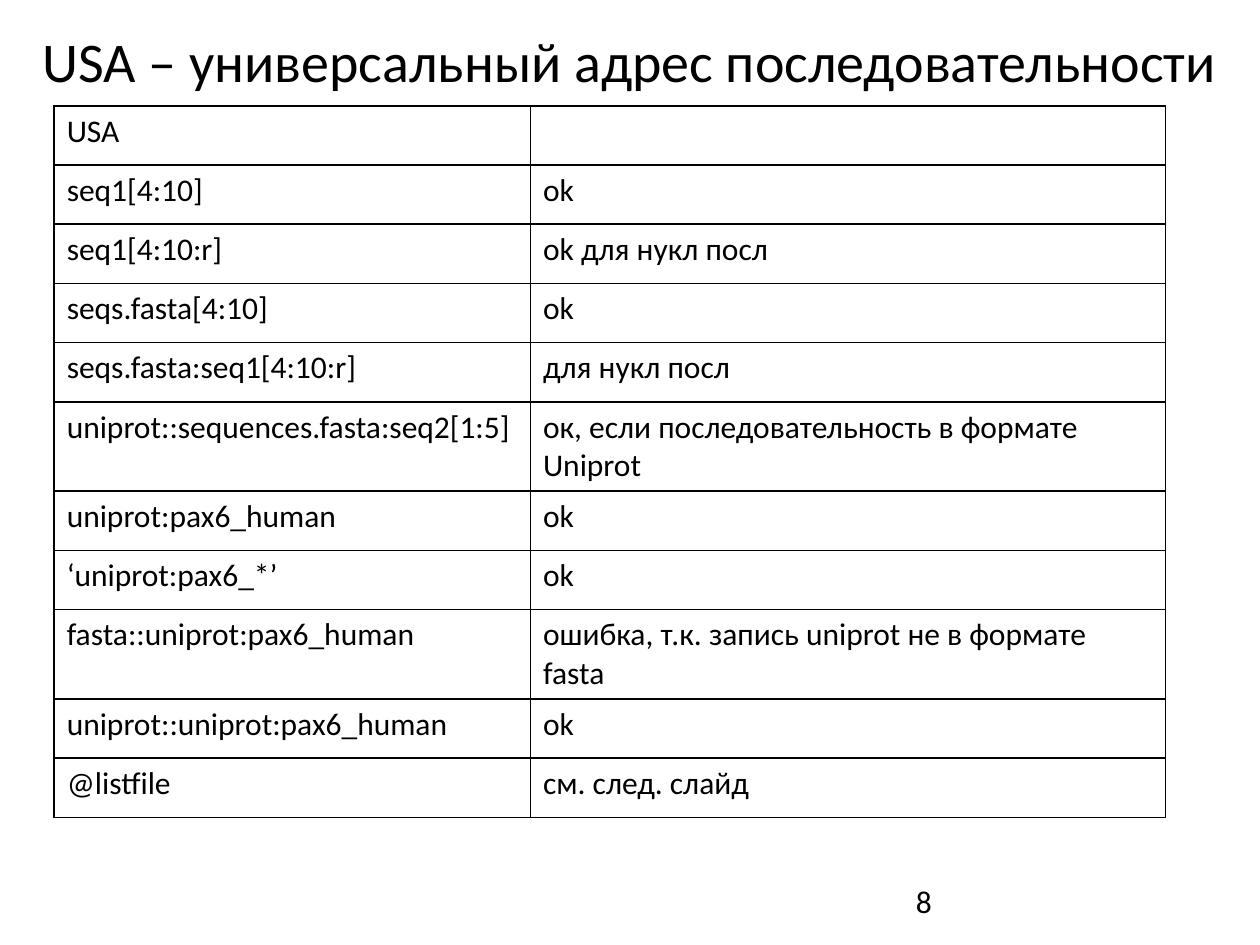
import pptx
import pptx.util
import pptx.dml.color
import pptx.enum.text
import pptx.oxml
from lxml import etree

Inches, Pt = pptx.util.Inches, pptx.util.Pt
ALIGN, ANCHOR = pptx.enum.text.PP_ALIGN, pptx.enum.text.MSO_ANCHOR

# Content
TITLE = "USA – универсальный адрес последовательности"
PAGE_NUMBER = "8"
ADDRESSES = [
    ("USA", ""),
    ("seq1[4:10]", "ok"),
    ("seq1[4:10:r]", "ok для нукл посл"),
    ("seqs.fasta[4:10]", "ok"),
    ("seqs.fasta:seq1[4:10:r]", "для нукл посл"),
    ("uniprot::sequences.fasta:seq2[1:5]",
     "ок, если последовательность в формате Uniprot"),
    ("uniprot:pax6_human", "ok"),
    ("‘uniprot:pax6_*’", "ok"),
    ("fasta::uniprot:pax6_human", "ошибка, т.к. запись uniprot не в формате fasta"),
    ("uniprot::uniprot:pax6_human", "ok"),
    ("@listfile", "см. след. слайд"),
]
TWO_LINE_ROWS = {5, 8}

# Look and layout
THEME = {"font": "Calibri", "ink": "000000", "paper": "FFFFFF",
         "title": 32, "body": 18, "border": 1}
TITLE_BOX = (0.12, 0.05, 9.76, 0.85)
NUMBER_BOX = (7.17, 6.95, 2.33, 0.4)
TABLE_LEFT, TABLE_TOP = 0.43, 0.84
COLUMN_WIDTHS = (3.78, 5.04)
ROW_HEIGHT, TALL_ROW_HEIGHT = 0.47, 0.71


def color(name):
    return pptx.dml.color.RGBColor.from_string(THEME[name])


def write(frame, text, size, align=ALIGN.LEFT):
    para = frame.paragraphs[0]
    para.alignment = align
    para.font.size = Pt(THEME[size])
    if text:
        span = para.add_run()
        span.text = text
        span.font.name = THEME["font"]
        span.font.size = Pt(THEME[size])
        span.font.color.rgb = color("ink")


def set_borders(cell):
    """Draw all four edges; line elements must come before the cell fill."""
    props = cell._tc.get_or_add_tcPr()
    for position, edge in enumerate(("lnL", "lnR", "lnT", "lnB")):
        line = etree.Element(pptx.oxml.ns.qn("a:" + edge), w=str(Pt(THEME["border"])))
        fill = etree.SubElement(line, pptx.oxml.ns.qn("a:solidFill"))
        etree.SubElement(fill, pptx.oxml.ns.qn("a:srgbClr"), val=THEME["ink"])
        props.insert(position, line)


def add_title(page):
    box = page.shapes.title
    box.left, box.top, box.width, box.height = map(Inches, TITLE_BOX)
    frame = box.text_frame
    frame.word_wrap = True
    frame.vertical_anchor = ANCHOR.MIDDLE
    write(frame, TITLE, "title", ALIGN.CENTER)


def add_page_number(page):
    frame = page.shapes.add_textbox(*map(Inches, NUMBER_BOX)).text_frame
    frame.word_wrap = True
    frame.vertical_anchor = ANCHOR.MIDDLE
    write(frame, PAGE_NUMBER, "body")


def add_address_table(page):
    heights = [TALL_ROW_HEIGHT if index in TWO_LINE_ROWS else ROW_HEIGHT
               for index in range(len(ADDRESSES))]
    table = page.shapes.add_table(
        len(ADDRESSES), len(COLUMN_WIDTHS), Inches(TABLE_LEFT), Inches(TABLE_TOP),
        Inches(sum(COLUMN_WIDTHS)), Inches(sum(heights))).table
    table.first_row = table.horz_banding = False
    for column, width in zip(table.columns, COLUMN_WIDTHS):
        column.width = Inches(width)
    for row, height, texts in zip(table.rows, heights, ADDRESSES):
        row.height = Inches(height)
        for cell, text in zip(row.cells, texts):
            cell.fill.solid()
            cell.fill.fore_color.rgb = color("paper")
            set_borders(cell)
            write(cell.text_frame, text, "body")


def main():
    deck = pptx.Presentation()
    deck.slide_width, deck.slide_height = Inches(10), Inches(7.5)
    page = deck.slides.add_slide(deck.slide_layouts.get_by_name("Title Only"))
    add_title(page)
    add_page_number(page)
    add_address_table(page)
    deck.save("out.pptx")


if __name__ == "__main__":
    main()
